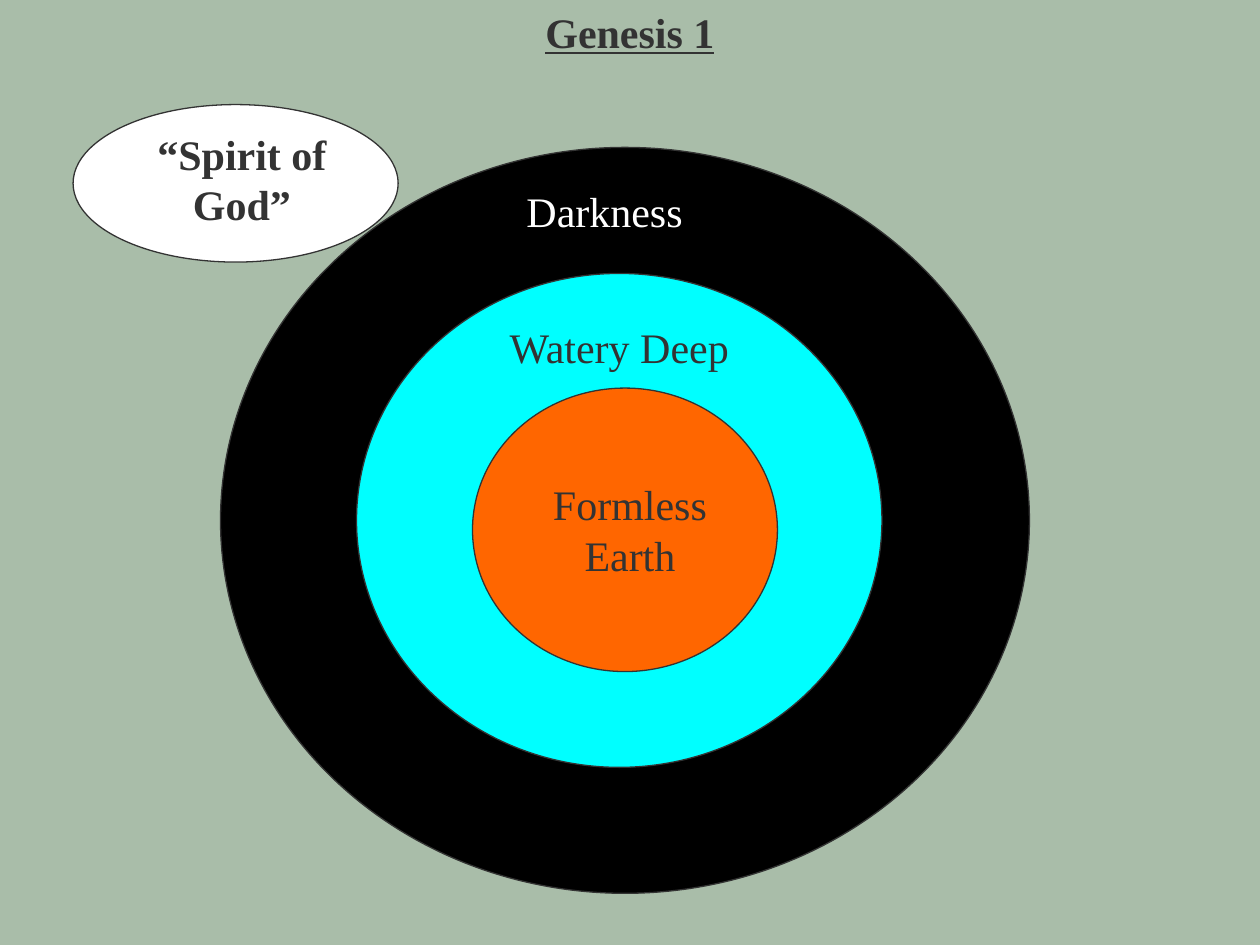
from pptx import Presentation
from pptx.dml.color import RGBColor
from pptx.enum.shapes import MSO_SHAPE
from pptx.enum.text import MSO_ANCHOR, MSO_AUTO_SIZE, PP_ALIGN
from pptx.util import Inches, Pt


def colour(hex_value):
    return RGBColor.from_string(hex_value)


class SlideBuilder:
    INK = "333333"
    FONT = {"name": "Times New Roman", "size": Pt(24)}

    def __init__(self, slide):
        self.slide = slide

    def background(self, fill):
        back = self.slide.background.fill
        back.solid()
        back.fore_color.rgb = colour(fill)

    def ellipse(self, box, fill):
        oval = self.slide.shapes.add_shape(MSO_SHAPE.OVAL, *map(Inches, box))
        oval.shadow.inherit = False
        oval.fill.solid()
        oval.fill.fore_color.rgb = colour(fill)
        oval.line.color.rgb = colour(self.INK)
        oval.line.width = Pt(0.75)

    def label(self, box, text, ink=INK, align=PP_ALIGN.CENTER,
              anchor=MSO_ANCHOR.TOP, wrap=True, **extra):
        frame = self.slide.shapes.add_textbox(*map(Inches, box)).text_frame
        frame.word_wrap = wrap
        frame.auto_size = MSO_AUTO_SIZE.SHAPE_TO_FIT_TEXT
        frame.vertical_anchor = anchor
        paragraph = frame.paragraphs[0]
        paragraph.alignment = align
        run = paragraph.add_run()
        run.text = text
        for attribute, value in {**self.FONT, **extra}.items():
            setattr(run.font, attribute, value)
        run.font.color.rgb = colour(ink)


def main():
    deck = Presentation()
    deck.slide_width, deck.slide_height = Inches(10), Inches(7.5)
    genesis = SlideBuilder(deck.slides.add_slide(deck.slide_layouts[6]))
    genesis.background("A9BDA9")

    # Title
    genesis.label((0, 0, 10, 0.5), "Genesis 1", bold=True, underline=True)

    # Nested layers, outermost first
    layers = [
        ((1.75, 1.17, 6.42, 5.92), "000000"),
        ((2.83, 2.17, 4.17, 3.92), "00FFFF"),
        ((3.75, 3.08, 2.42, 2.25), "FF6600"),
    ]
    for box, fill in layers:
        genesis.ellipse(box, fill)

    # Layer names
    genesis.label((4.08, 1.42, 1.67, 0.5), "Darkness", "FFFFFF", PP_ALIGN.LEFT)
    genesis.label((3.75, 2.5, 2.33, 0.5), "Watery Deep")
    genesis.label((4.25, 3.75, 1.5, 0.9), "Formless Earth")

    # Spirit above the darkness
    genesis.ellipse((0.58, 0.83, 2.58, 1.25), "FFFFFF")
    genesis.label((0.72, 1.17, 2.4, 0.5), "“Spirit of God”",
                  anchor=MSO_ANCHOR.MIDDLE, wrap=False, bold=True)

    deck.save("out.pptx")


if __name__ == "__main__":
    main()
